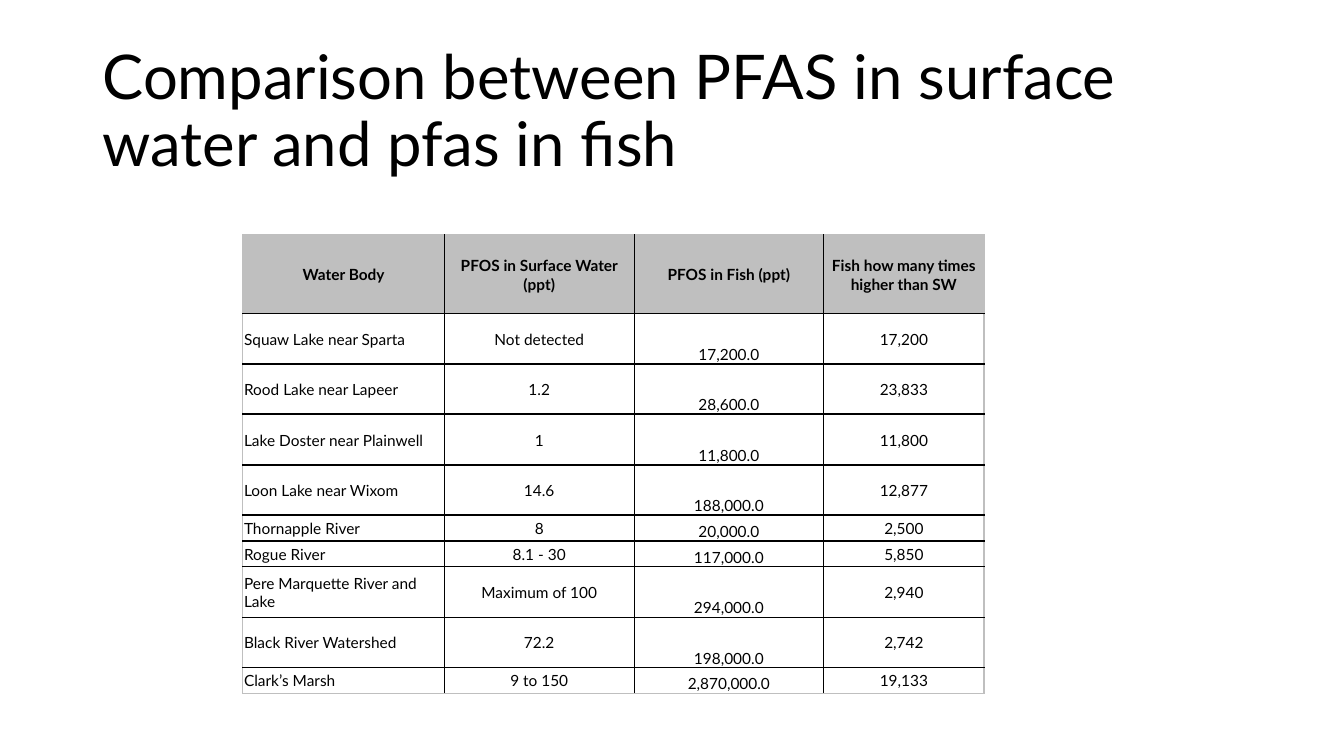
from lxml import etree
from pptx import Presentation
from pptx import util as u
from pptx.dml import color
from pptx.enum import text
from pptx.oxml import ns

FONT = "Lato"
BLACK = "000000"
GREY = "BFBFBF"

HEADINGS = ["Water Body", "PFOS in Surface Water (ppt)", "PFOS in Fish (ppt)",
            "Fish how many times higher than SW"]
WATER_BODIES = [
    ["Squaw Lake near Sparta", "Not detected", "17,200.0", "17,200"],
    ["Rood Lake near Lapeer", "1.2", "28,600.0", "23,833"],
    ["Lake Doster near Plainwell", "1", "11,800.0", "11,800"],
    ["Loon Lake near Wixom", "14.6", "188,000.0", "12,877"],
    ["Thornapple River", "8", "20,000.0", "2,500"],
    ["Rogue River", "8.1 - 30", "117,000.0", "5,850"],
    ["Pere Marquette River and Lake", "Maximum of 100", "294,000.0", "2,940"],
    ["Black River Watershed", "72.2", "198,000.0", "2,742"],
    ["Clark’s Marsh", "9 to 150", "2,870,000.0", "19,133"],
]
TALL, SHORT = 1.27, 0.65
ROW_HEIGHTS = [1.98] + [TALL] * 4 + [SHORT] * 2 + [TALL] * 2 + [SHORT]
COLUMN_WIDTHS = [5.08, 4.78, 4.78, 4.04]
LAST_THICK_ROW = 4
FISH_COLUMN = 2


def rgb(value):
    return color.RGBColor.from_string(value)


def format_paragraph(paragraph, size, alignment, bold=False):
    paragraph.alignment = alignment
    for run in paragraph.runs:
        run.font.name = FONT
        run.font.size = u.Pt(size)
        run.font.bold = bold
        run.font.color.rgb = rgb(BLACK)


def set_border(cell, side, line_color, width):
    properties = cell._tc.get_or_add_tcPr()
    line = etree.SubElement(properties, ns.qn(f"a:ln{side}"), w=str(u.Pt(width)))
    fill = etree.SubElement(line, ns.qn("a:solidFill"))
    etree.SubElement(fill, ns.qn("a:srgbClr"), val=line_color)


def horizontal_line(edge):
    """Colour and width of the line above the row with this number."""
    if edge in (0, len(ROW_HEIGHTS)):
        return GREY, 1
    return BLACK, 1.5 if edge <= LAST_THICK_ROW + 1 else 1


def vertical_line(edge):
    return (GREY if edge in (0, len(COLUMN_WIDTHS)) else BLACK), 1


def add_title(slide, words):
    title = slide.shapes.title
    title.left, title.top = u.Cm(2.33), u.Cm(1.01)
    title.width, title.height = u.Cm(29.21), u.Cm(3.68)
    frame = title.text_frame
    frame.text = words
    frame.word_wrap = True
    frame.auto_size = text.MSO_AUTO_SIZE.NONE
    frame.vertical_anchor = text.MSO_ANCHOR.MIDDLE
    frame.paragraphs[0].line_spacing = 0.9
    format_paragraph(frame.paragraphs[0], 44, text.PP_ALIGN.LEFT)


def fill_cell(cell, words, row, column):
    is_heading = row == 0
    cell.text_frame.text = words
    cell.margin_left = cell.margin_right = cell.margin_top = u.Cm(0.03)
    cell.margin_bottom = 0
    at_bottom = column == FISH_COLUMN and not is_heading
    cell.vertical_anchor = text.MSO_ANCHOR.BOTTOM if at_bottom else text.MSO_ANCHOR.MIDDLE
    at_left = column == 0 and not is_heading
    alignment = text.PP_ALIGN.LEFT if at_left else text.PP_ALIGN.CENTER
    format_paragraph(cell.text_frame.paragraphs[0], 11, alignment, is_heading)

    # Borders come before the fill in the cell properties
    set_border(cell, "L", *vertical_line(column))
    set_border(cell, "R", *vertical_line(column + 1))
    set_border(cell, "T", *horizontal_line(row))
    set_border(cell, "B", *horizontal_line(row + 1))
    if is_heading:
        cell.fill.solid()
        cell.fill.fore_color.rgb = rgb(GREY)
    else:
        cell.fill.background()


def add_comparison_table(slide):
    rows = [HEADINGS] + WATER_BODIES
    frame = slide.shapes.add_table(
        len(rows), len(HEADINGS), u.Cm(6.12), u.Cm(5.92),
        u.Cm(sum(COLUMN_WIDTHS)), u.Cm(sum(ROW_HEIGHTS)))
    table = frame.table
    table.first_row = table.horz_banding = False
    for column, width in zip(table.columns, COLUMN_WIDTHS):
        column.width = u.Cm(width)
    for row, height in zip(table.rows, ROW_HEIGHTS):
        row.height = u.Cm(height)
    for row, values in enumerate(rows):
        for column, words in enumerate(values):
            fill_cell(table.cell(row, column), words, row, column)


def main():
    presentation = Presentation()
    presentation.slide_width, presentation.slide_height = u.Cm(33.87), u.Cm(19.05)
    title_only = presentation.slide_layouts[5]
    slide = presentation.slides.add_slide(title_only)
    add_title(slide, "Comparison between PFAS in surface water and pfas in fish")
    add_comparison_table(slide)
    presentation.save("out.pptx")


if __name__ == "__main__":
    main()
